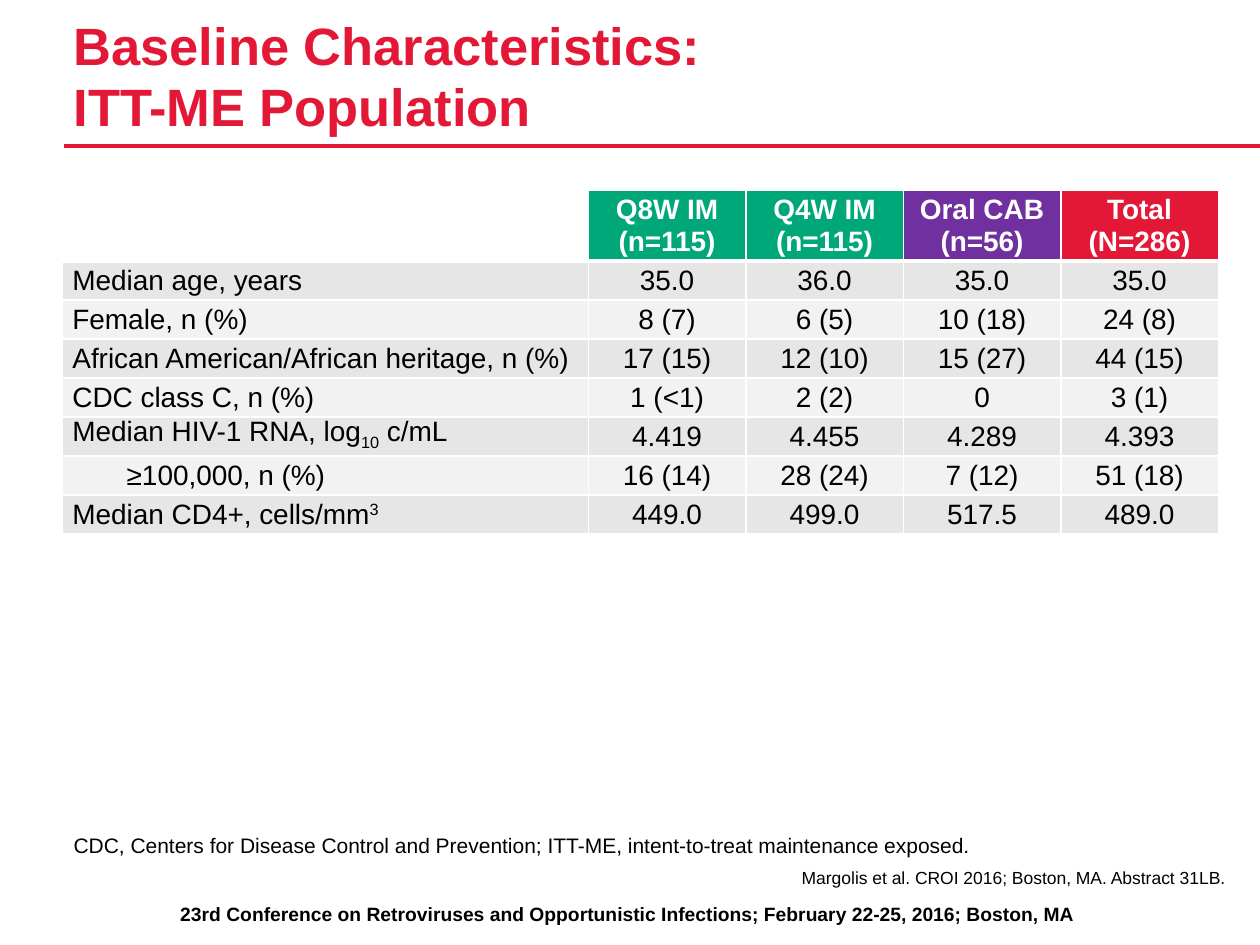
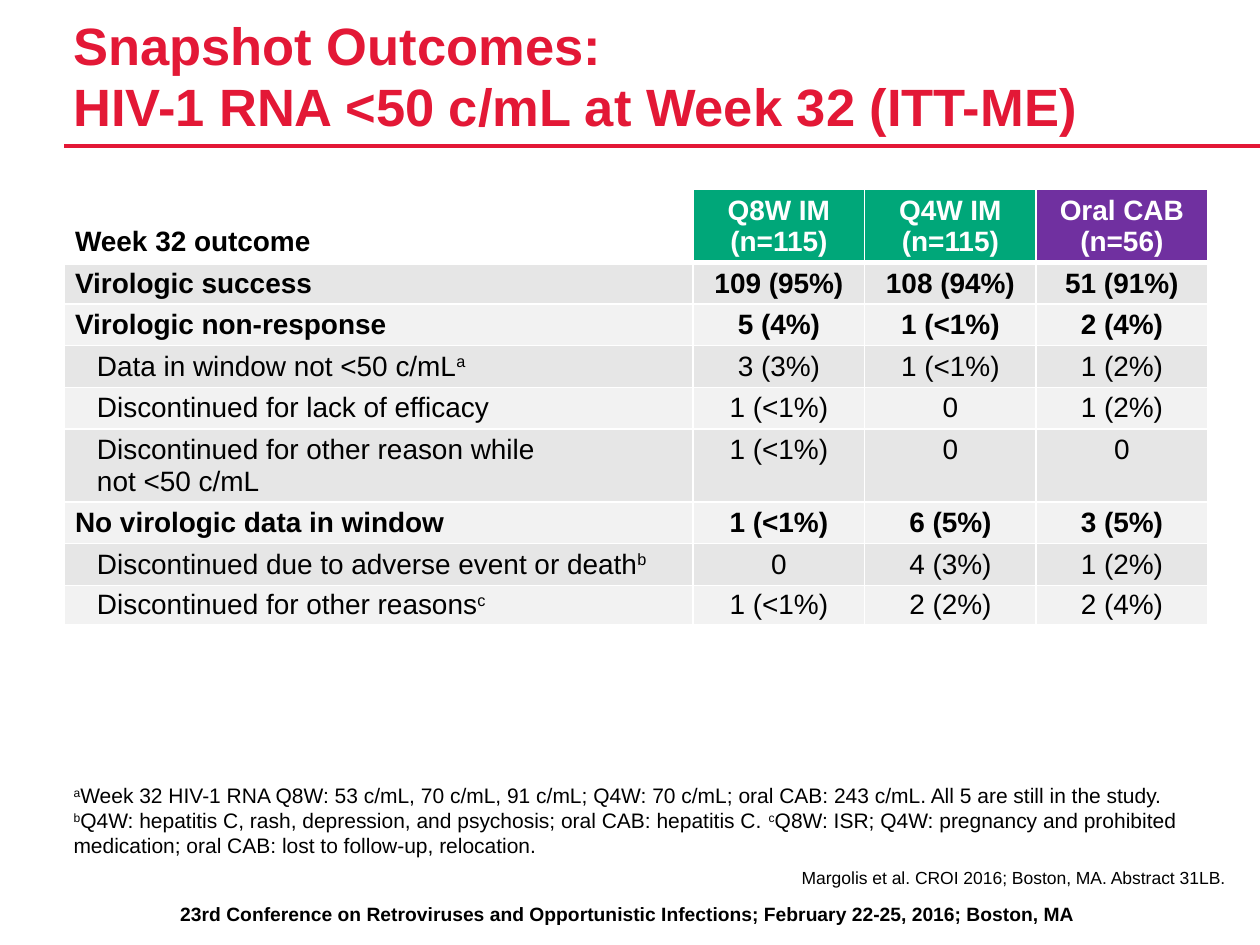
from lxml.etree import SubElement as Sub
from pptx import Presentation
from pptx.dml.color import RGBColor as RGB
from pptx.enum.shapes import MSO_CONNECTOR as Link
from pptx.enum.text import MSO_ANCHOR as Anchor, MSO_AUTO_SIZE as Fit, PP_ALIGN as Align
from pptx.oxml.ns import qn
from pptx.util import Pt

RED, GREEN, PURPLE = "E31836", "00A779", "7030A0"
BLACK, WHITE = "000000", "FFFFFF"
BANDS = ["E6E6E6", "F2F2F2"]
FOOTER = ("23rd Conference on Retroviruses and Opportunistic Infections; "
          "February 22-25, 2016; Boston, MA")
SOURCE = "Margolis et al. CROI 2016; Boston, MA. Abstract 31LB."
ARMS = [("Q8W IM\n(n=115)", GREEN), ("Q4W IM\n(n=115)", GREEN), ("Oral CAB\n(n=56)", PURPLE)]

# Each row: bold, left indent, label, values
BASE = [
    (False, 5, "Median age, years", "35.0", "36.0", "35.0", "35.0"),
    (False, 5, "Female, n (%)", "8 (7)", "6 (5)", "10 (18)", "24 (8)"),
    (False, 5, "African American/African heritage, n (%)",
     "17 (15)", "12 (10)", "15 (27)", "44 (15)"),
    (False, 5, "CDC class C, n (%)", "1 (<1)", "2 (2)", "0", "3 (1)"),
    (False, 5, "Median HIV-1 RNA, log|_10| c/mL", "4.419", "4.455", "4.289", "4.393"),
    (False, 36, "≥100,000, n (%)", "16 (14)", "28 (24)", "7 (12)", "51 (18)"),
    (False, 5, "Median CD4+, cells/mm|3|", "449.0", "499.0", "517.5", "489.0"),
]
SNAP = [
    (True, 5.5, "Virologic success", "109 (95%)", "108 (94%)", "51 (91%)"),
    (True, 5.5, "Virologic non-response", "5 (4%)", "1 (<1%)", "2 (4%)"),
    (False, 18, "Data in window not <50 c/mL|a|", "3 (3%)", "1 (<1%)", "1 (2%)"),
    (False, 18, "Discontinued for lack of efficacy", "1 (<1%)", "0", "1 (2%)"),
    (False, 18, "Discontinued for other reason while\nnot <50 c/mL", "1 (<1%)", "0", "0"),
    (True, 5.5, "No virologic data in window", "1 (<1%)", "6 (5%)", "3 (5%)"),
    (False, 18, "Discontinued due to adverse event or death|b|", "0", "4 (3%)", "1 (2%)"),
    (False, 18, "Discontinued for other reasons|c|", "1 (<1%)", "2 (2%)", "2 (4%)"),
]


def paint(item, color):
    """Give a fill or line format a solid colour."""
    item.solid()
    item.fore_color.rgb = RGB.from_string(color)


def write(frame, text, size, color=BLACK, bold=False, indent=0, **form):
    """Fill a frame; text between bars is raised, or lowered if it starts with _."""
    para = frame.paragraphs[0]
    props = para._p.get_or_add_pPr()
    props.set("marL", str(Pt(indent)))
    props.set("indent", "0")
    Sub(props, qn("a:buNone"))
    for name, value in ({"alignment": Align.LEFT, "space_before": Pt(0)} | form).items():
        setattr(para, name, value)
    look = {"name": "Arial", "size": Pt(size), "bold": bold}
    for row, line in enumerate(text.split("\n")):
        if row:
            para.add_line_break()
        for spot, part in enumerate(line.split("|")):
            if not part:
                continue
            run = para.add_run()
            run.text = part.lstrip("_")
            for name, value in look.items():
                setattr(run.font, name, value)
            run.font.color.rgb = RGB.from_string(color)
            if spot % 2:
                shift = "-25000" if part.startswith("_") else "30000"
                run._r.get_or_add_rPr().set("baseline", shift)


def place(shape, box, anchor, text, size, **form):
    """Move a placeholder, clear its insets and write into it."""
    for name, value in zip(("left", "top", "width", "height"), box):
        setattr(shape, name, Pt(value))
    frame = shape.text_frame
    sides = {f"margin_{side}": 0 for side in ("left", "top", "right", "bottom")}
    setup = {"word_wrap": True, "auto_size": Fit.NONE, "vertical_anchor": anchor}
    for name, value in (sides | setup).items():
        setattr(frame, name, value)
    write(frame, text, size, **form)


def edge(cell, foot):
    """Draw white cell borders, the bottom one foot points wide."""
    props = cell._tc.get_or_add_tcPr()
    for spot, (side, width) in enumerate({"L": 1, "R": 1, "T": 1, "B": foot}.items()):
        line = props.makeelement(qn(f"a:ln{side}"), {"w": str(Pt(width))})
        solid = Sub(line, qn("a:solidFill"))
        Sub(solid, qn("a:srgbClr"), val=WHITE)
        props.insert(spot, line)


def fill(cell, back, pad, text, foot=1, anchor=Anchor.TOP, **form):
    """Set a cell's insets, background, borders and text."""
    setup = {"margin_left": Pt(0.72), "margin_right": Pt(0.72), "margin_top": Pt(pad),
             "margin_bottom": Pt(pad), "vertical_anchor": anchor}
    for name, value in setup.items():
        setattr(cell, name, value)
    paint(cell.fill, back)
    edge(cell, foot)
    write(cell.text_frame, text, 16, line_spacing=Pt(18), **form)


def grid(slide, spot, cols, highs, pad, corner, heads, rows):
    """Add a table with coloured heads and banded rows."""
    sizes = [Pt(n) for n in (*spot, sum(cols), sum(highs))]
    table = slide.shapes.add_table(len(highs), len(cols), *sizes).table
    for col, width in zip(table.columns, cols):
        col.width = Pt(width)
    for row, high in zip(table.rows, highs):
        row.height = Pt(high)
    top = {"foot": 3, "anchor": Anchor.BOTTOM, "bold": True}
    fill(table.cell(0, 0), WHITE, pad, corner, indent=5.5, **top)
    for x, (text, back) in enumerate(heads, 1):
        fill(table.cell(0, x), back, pad, text, color=WHITE, alignment=Align.CENTER, **top)
    for y, (bold, indent, label, *values) in enumerate(rows, 1):
        band = BANDS[(y - 1) % 2]
        inset = min(pad, (highs[y] - 18) / 2)
        fill(table.cell(y, 0), band, inset, label, bold=bold, indent=indent)
        for x, text in enumerate(values, 1):
            fill(table.cell(y, x), band, inset, text, bold=bold, alignment=Align.CENTER)


def rule(slide):
    line = slide.shapes.add_connector(Link.STRAIGHT, Pt(36.7), Pt(83.5), Pt(720), Pt(83.5))
    paint(line.line.fill, RED)
    line.line.width = Pt(2)
    Sub(line._element.spPr, qn("a:effectLst"))


def start(deck, title, note):
    """Add a slide with title, rule, notes and footer."""
    slide = deck.slides.add_slide(deck.slide_layouts[3])
    rule(slide)
    foot = slide.shapes.add_textbox(Pt(4.3), Pt(512), Pt(709), Pt(21))
    foot.text_frame.word_wrap = True
    write(foot.text_frame, FOOTER, 11, bold=True, alignment=Align.CENTER)
    place(slide.shapes.title, (42, 12.2, 594, 66.2), Anchor.BOTTOM, title, 30,
          color=RED, bold=True, line_spacing=Pt(35))
    holds = slide.placeholders
    place(holds[1], (42, 495.4, 658, 14.4), Anchor.TOP, SOURCE, 10,
          alignment=Align.RIGHT, space_after=Pt(3))
    place(holds[2], (42, 461.5, 658, 28.8), Anchor.BOTTOM, note, 12, space_after=Pt(3))
    return slide


def main():
    deck = Presentation()
    deck.slide_width, deck.slide_height = Pt(720), Pt(540)

    slide = start(deck, "Baseline Characteristics:\nITT-ME Population",
                  "CDC, Centers for Disease Control and Prevention; "
                  "ITT-ME, intent-to-treat maintenance exposed.")
    grid(slide, (35.7, 108.5), [300.5] + [90] * 4, [40.6] + [22.3] * 7, 2.1,
         "", ARMS + [("Total\n(N=286)", RED)], BASE)

    slide = start(deck, "Snapshot Outcomes:\nHIV-1 RNA <50 c/mL at Week 32 (ITT-ME)",
                  "|a|Week 32 HIV-1 RNA Q8W: 53 c/mL, 70 c/mL, 91 c/mL; Q4W: 70 c/mL; "
                  "oral CAB: 243 c/mL. All 5 are still in the study. "
                  "|b|Q4W: hepatitis C, rash, depression, and psychosis; "
                  "oral CAB: hepatitis C. |c|Q8W: ISR; Q4W: pregnancy and prohibited "
                  "medication; oral CAB: lost to follow-up, relocation.")
    highs = [41.8] + [23.8] * 4 + [41.8] + [23.8] * 2 + [22.3]
    grid(slide, (36.7, 108.2), [359.4] + [98] * 3, highs, 2.88,
         "Week 32 outcome", ARMS, SNAP)

    deck.save("out.pptx")


if __name__ == "__main__":
    main()
